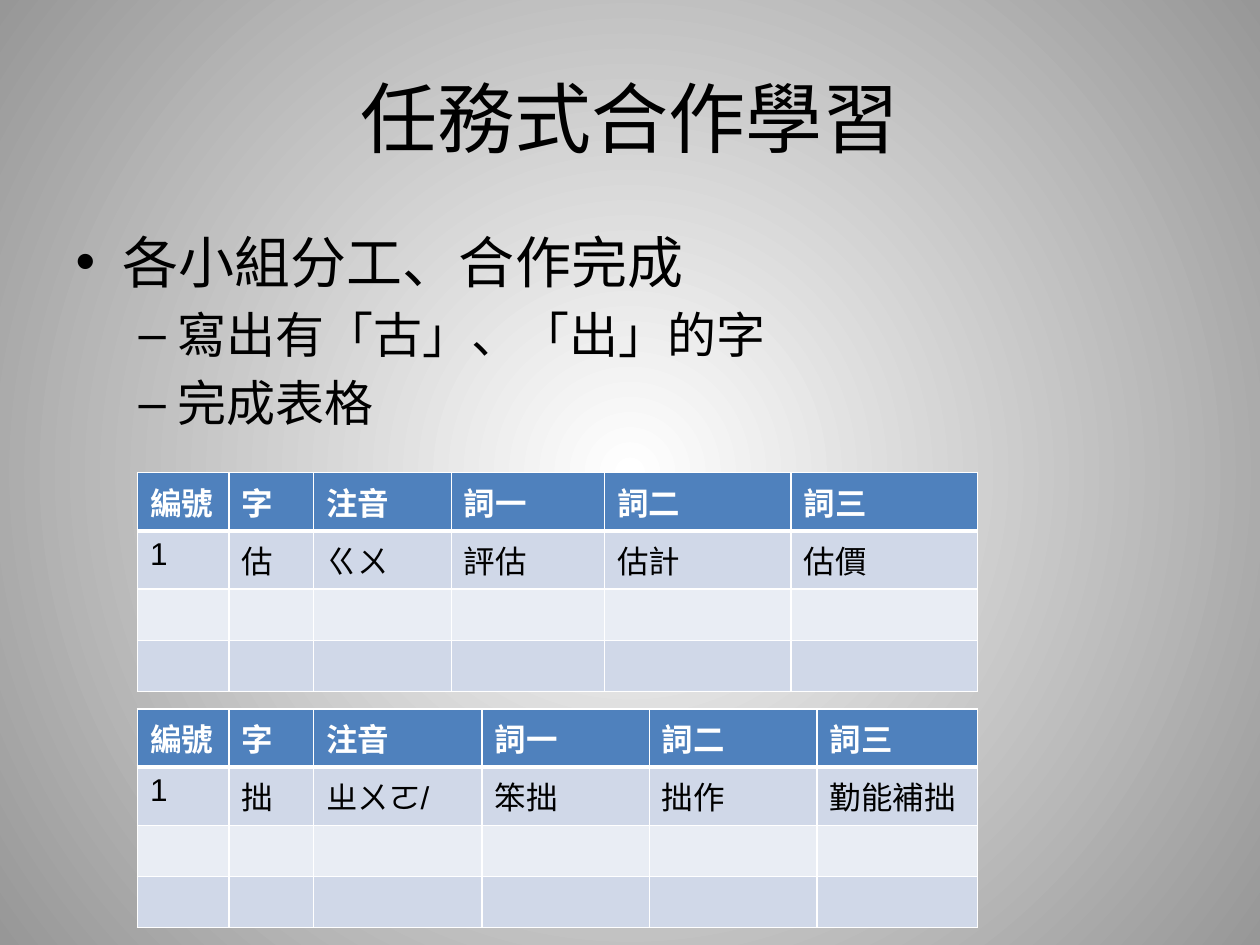
from lxml.etree import SubElement
from pptx import Presentation
from pptx.dml.color import RGBColor
from pptx.enum.text import MSO_ANCHOR, PP_ALIGN
from pptx.oxml import parse_xml
from pptx.oxml.ns import nsdecls, qn
from pptx.util import Cm, Pt

COLORS = {
    "text": "000000",
    "white": "FFFFFF",
    "edge": "979797",
    "header": "4F81BD",
    "band_dark": "D0D8E8",
    "band_light": "E9EDF4",
}
HEADINGS = ["編號", "字", "注音", "詞一", "詞二", "詞三"]
ROW_COUNT = 4
ROW_HEIGHT = 1.03
TABLE_LEFT = 2.77


def color(name):
    return RGBColor.from_string(COLORS[name])


def style(paragraph, size, font="Calibri", tint="text", bold=False):
    paragraph.font.name = font
    paragraph.font.size = Pt(size)
    paragraph.font.bold = bold
    paragraph.font.color.rgb = color(tint)


def place(shape, left, top, width, height):
    shape.left, shape.top = Cm(left), Cm(top)
    shape.width, shape.height = Cm(width), Cm(height)


def set_radial_background(slide):
    fill = slide.background.fill
    fill.gradient()
    for stop, position, tint in zip(fill.gradient_stops, (0, 1), ("white", "edge")):
        stop.position = position
        stop.color.rgb = color(tint)
    gradient = slide.element.find(".//" + qn("a:gradFill"))
    gradient.remove(gradient.find(qn("a:lin")))
    circle = SubElement(gradient, qn("a:path"), path="circle")
    SubElement(circle, qn("a:fillToRect"), l="50000", t="50000", r="50000", b="50000")


def set_title(slide, text):
    title = slide.shapes.title
    place(title, 1.27, 0.76, 22.86, 3.18)
    title.text_frame.text = text
    title.text_frame.vertical_anchor = MSO_ANCHOR.MIDDLE
    heading = title.text_frame.paragraphs[0]
    heading.alignment = PP_ALIGN.CENTER
    style(heading, 44)


def set_tasks(slide, tasks):
    """Fill the body with (level, text) pairs; bullets come from the template."""
    body = slide.placeholders[1]
    place(body, 1.27, 4.45, 22.86, 5.08)
    body.text_frame.text = "\n".join(text for _, text in tasks)
    for paragraph, (level, _) in zip(body.text_frame.paragraphs, tasks):
        paragraph.level = level
        style(paragraph, 28 if level else 32)


def set_borders(cell, widths):
    """Draw white borders, with widths in points for left, right, top and bottom."""
    properties = cell._tc.get_or_add_tcPr()
    for index, (side, width) in enumerate(zip("LRTB", widths)):
        properties.insert(index, parse_xml(
            f'<a:ln{side} {nsdecls("a")} w="{Pt(width)}"><a:solidFill>'
            f'<a:srgbClr val="{COLORS["white"]}"/></a:solidFill></a:ln{side}>'))


def add_word_table(slide, top, widths, example):
    """Add a table with headings, one example row and rows left to fill in."""
    table = slide.shapes.add_table(
        ROW_COUNT, len(HEADINGS), Cm(TABLE_LEFT), Cm(top),
        Cm(sum(widths)), Cm(ROW_COUNT * ROW_HEIGHT)).table
    for column, width in zip(table.columns, widths):
        column.width = Cm(width)
    texts = [HEADINGS, example] + [[""] * len(HEADINGS)] * (ROW_COUNT - 2)
    fills = ["header", "band_dark", "band_light", "band_dark"]
    for index, (row, row_texts, tint) in enumerate(zip(table.rows, texts, fills)):
        row.height = Cm(ROW_HEIGHT)
        is_header = index == 0
        borders = (1, 1, 3 if index == 1 else 1, 3 if is_header else 1)
        for cell, text in zip(row.cells, row_texts):
            cell.text = text
            cell.fill.solid()
            cell.fill.fore_color.rgb = color(tint)
            set_borders(cell, borders)
            style(cell.text_frame.paragraphs[0], 18, "Arial",
                  "white" if is_header else "text", is_header)


def main():
    deck = Presentation()
    deck.slide_width, deck.slide_height = Cm(25.4), Cm(19.05)
    slide = deck.slides.add_slide(deck.slide_layouts[1])
    set_radial_background(slide)
    set_title(slide, "任務式合作學習")
    set_tasks(slide, [(0, "各小組分工、合作完成"),
                      (1, "寫出有「古」、「出」的字"),
                      (1, "完成表格")])
    add_word_table(slide, 9.53, [1.85, 1.7, 2.78, 3.09, 3.76, 3.76],
                   ["1", "估", "ㄍㄨ", "評估", "估計", "估價"])
    add_word_table(slide, 14.29, [1.85, 1.7, 3.4, 3.37, 3.38, 3.24],
                   ["1", "拙", "ㄓㄨㄛ/", "笨拙", "拙作", "勤能補拙"])
    deck.save("out.pptx")


if __name__ == "__main__":
    main()
